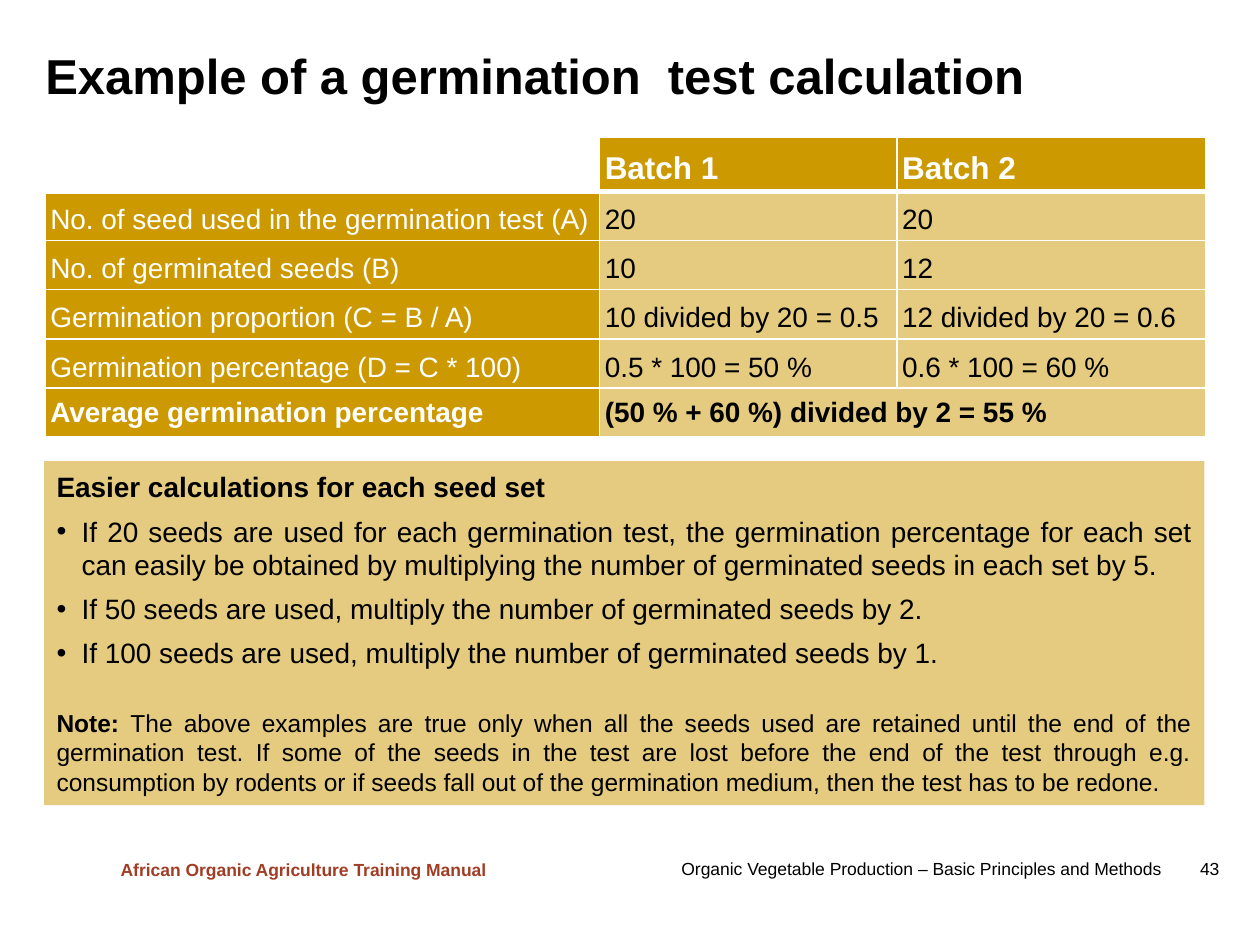
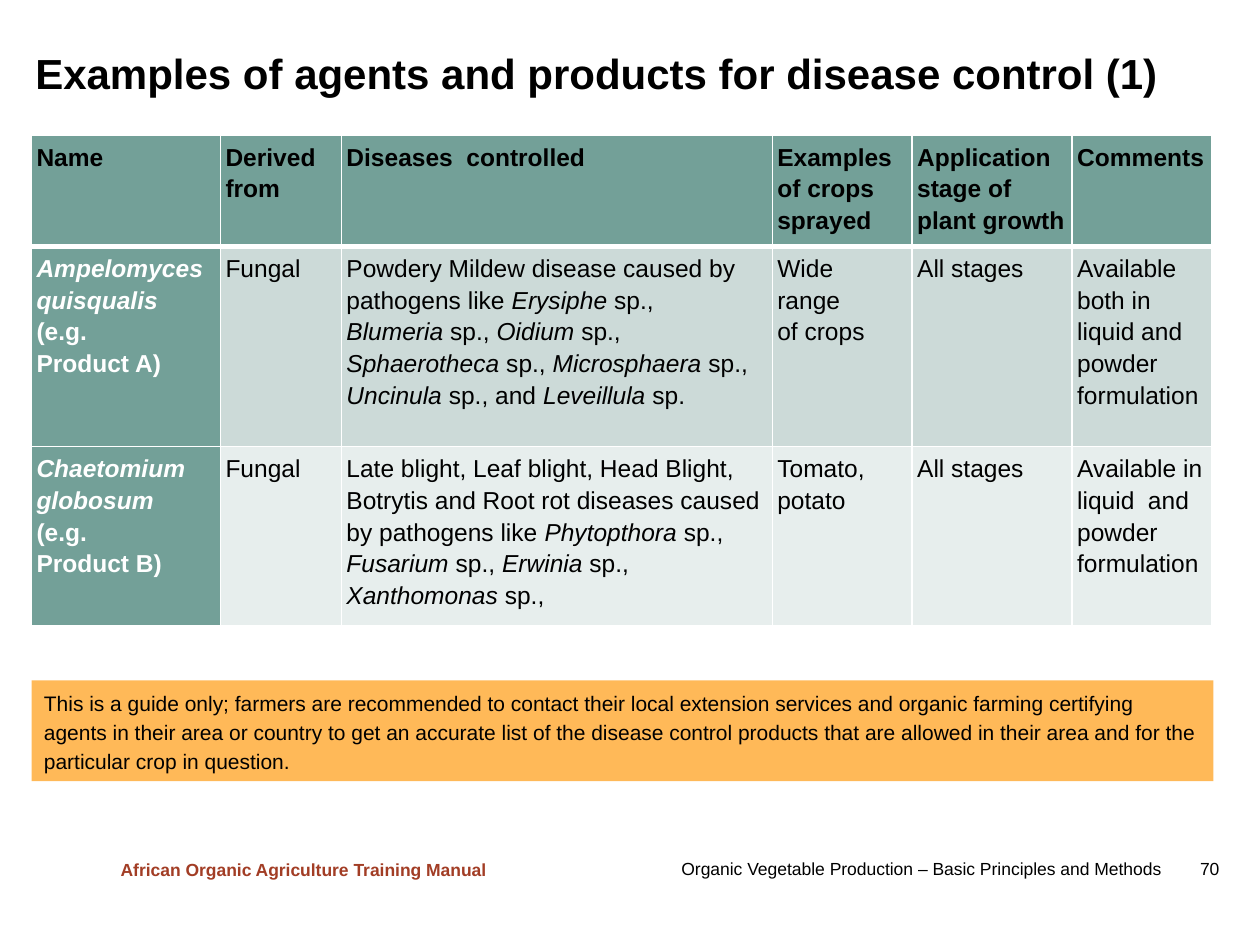
"""Build two training-manual slides on germination tests and disease control."""
import pptx
import pptx.dml.color
import pptx.enum.shapes
import pptx.enum.text
import pptx.oxml.ns
import pptx.util
from lxml import etree

RGBColor = pptx.dml.color.RGBColor
Pt = pptx.util.Pt
ALIGN = pptx.enum.text.PP_ALIGN
ANCHOR = pptx.enum.text.MSO_ANCHOR
qn = pptx.oxml.ns.qn

BLACK = RGBColor(0x00, 0x00, 0x00)
WHITE = RGBColor(0xFF, 0xFF, 0xFF)
GOLD = RGBColor(0xCC, 0x99, 0x00)
TEAL = RGBColor(0x73, 0xA0, 0x98)
TEAL_LIGHT = RGBColor(0xCC, 0xDA, 0xD8)
TEAL_PALE = RGBColor(0xE7, 0xEE, 0xED)
ORANGE = RGBColor(0xFF, 0xB9, 0x58)
RUST = RGBColor(0xA2, 0x3D, 0x25)

deck = pptx.Presentation()
deck.slide_width = pptx.util.Inches(10)
deck.slide_height = pptx.util.Inches(7.5)
UNIT = deck.slide_width // 100


def on_grid(*cells):
    return [int(cell * UNIT) for cell in cells]


def dress(part, paragraphs, font, frame={}, layout={}, fill=None, alpha=100, accent="italic"):
    if fill is not None:
        part.fill.solid()
        part.fill.fore_color.rgb = fill
        if alpha < 100:
            colour = part.fill._xPr.find(qn("a:solidFill"))[0]
            etree.SubElement(colour, qn("a:alpha"), val=str(alpha * 1000))
    holder = part if hasattr(part, "margin_left") else part.text_frame
    for key, value in frame.items():
        setattr(holder, key, value)
    for index, text in enumerate(paragraphs):
        body = part.text_frame
        paragraph = body.add_paragraph() if index else body.paragraphs[0]
        for key, value in layout.items():
            setattr(paragraph, key, value)
        for piece, words in enumerate(text.split("|")):
            for line, phrase in enumerate(words.split("\n")):
                if line:
                    paragraph.add_line_break()
                if not phrase:
                    continue
                run = paragraph.add_run()
                run.text = phrase
                run.font.name = "Arial"
                run.font.color.rgb = font["color"]
                run.font.size = Pt(font["size"])
                run.font.bold = font.get("bold", False)
                if piece % 2:
                    setattr(run.font, accent, True)


CELL_MARGINS = {f"margin_{side}": on_grid(0.4)[0] for side in ("left", "top", "right", "bottom")}
TITLE_FRAME = {
    "margin_left": 0,
    "margin_top": 0,
    "margin_right": UNIT,
    "margin_bottom": UNIT // 2,
    "vertical_anchor": ANCHOR.MIDDLE,
    "word_wrap": True,
    "auto_size": pptx.enum.text.MSO_AUTO_SIZE.NONE,
}

pages = [
    {
        "number": 43,
        "title": "Example of a germination  test calculation",
        "title_at": (3.6, 2.8, 92.1, 6.8),
        "title_size": 28,
        "table_at": (3.6, 10.9),
        "columns": (44, 23.6, 24.5),
        "heights": (4.3, 3.9, 3.9, 3.9, 3.9, 3.9),
        "head": {"color": WHITE, "size": 18, "bold": True},
        "body_size": 16,
        "bold_label_rows": (5,),
        "bold_rows": (5,),
        "middle_rows": (5,),
        "anchor": ANCHOR.BOTTOM,
        "main": GOLD,
        "bands": [(GOLD, 50)],
        "spacing": 1.0,
        "rows": [
            ("", "Batch 1", "Batch 2"),
            ("No. of seed used in the germination test (A)", "20", "20"),
            ("No. of germinated seeds (B)", "10", "12"),
            ("Germination proportion (C = B / A)", "10 divided by 20 = 0.5", "12 divided by 20 = 0.6"),
            ("Germination percentage (D = C * 100)", "0.5 * 100 = 50 %", "0.6 * 100 = 60 %"),
            ("Average germination percentage", "(50 % + 60 %) divided by 2 = 55 %"),
        ],
        "note_at": (3.5, 36.6, 92.1, 27.3),
        "note_fill": (GOLD, 50),
        "note_size": 16,
        "note_align": ALIGN.JUSTIFY,
        "note_anchor": ANCHOR.MIDDLE,
        "note": [
            "|Easier calculations for each seed set|",
            "If 20 seeds are used for each germination test, the germination percentage for each set "
            "can easily be obtained by multiplying the number of germinated seeds in each set by 5.",
            "If 50 seeds are used, multiply the number of germinated seeds by 2.",
            "If 100 seeds are used, multiply the number of germinated seeds by 1.",
            "|Note: |The above examples are true only when all the seeds used are retained until the end "
            "of the germination test. If some of the seeds in the test are lost before the end of the test "
            "through e.g. consumption by rodents or if seeds fall out of the germination medium, "
            "then the test has to be redone.",
        ],
    },
    {
        "number": 70,
        "title": "Examples of agents and products for disease control (1)",
        "title_at": (2.8, 2.5, 97.2, 7.1),
        "title_size": 24,
        "table_at": (2.5, 10.7),
        "columns": (15, 9.6, 34.2, 11.1, 12.7, 11.1),
        "heights": (8.3, 15.9, 13.3),
        "head": {"color": BLACK, "size": 14, "bold": True},
        "body_size": 14,
        "bold_label_rows": (1, 2),
        "bold_rows": (),
        "middle_rows": (),
        "anchor": ANCHOR.TOP,
        "main": TEAL,
        "bands": [(TEAL_LIGHT, 100), (TEAL_PALE, 100)],
        "spacing": 1.15,
        "rows": [
            ("Name", "Derived from", "Diseases  controlled", "Examples of crops sprayed",
             "Application stage of plant growth", "Comments"),
            ("|Ampelomyces quisqualis|\n\n(e.g. \nProduct A)", "Fungal",
             "Powdery Mildew disease caused by pathogens like |Erysiphe| sp., \n|Blumeria| sp., |Oidium| sp., "
             "|Sphaerotheca| sp., |Microsphaera| sp., |Uncinula| sp., and |Leveillula| sp.",
             "Wide\nrange \nof crops", "All stages", "Available both in liquid and powder formulation"),
            ("|Chaetomium globosum|\n\n(e.g. \nProduct B)", "Fungal",
             "Late blight, Leaf blight, Head Blight, Botrytis and Root rot diseases caused by pathogens like "
             "|Phytopthora| sp., |Fusarium| sp., |Erwinia| sp., |Xanthomonas| sp.,",
             "Tomato, potato", "All stages", "Available in liquid  and powder  formulation"),
        ],
        "note_at": (2.5, 54, 93.8, 8),
        "note_fill": (ORANGE, 100),
        "note_size": 12,
        "note_align": ALIGN.LEFT,
        "note_anchor": ANCHOR.TOP,
        "note": [
            "This is a guide only; farmers are recommended to contact their local extension services and "
            "organic farming certifying agents in their area or country to get an accurate list of the disease "
            "control products that are allowed in their area and for the particular crop in question.",
        ],
    },
]

notes = []
for page in pages:
    slide = deck.slides.add_slide(deck.slide_layouts[5])

    subject = slide.shapes.add_textbox(*on_grid(53.1, 67.6, 46, 2.7))
    dress(subject, [f"Organic Vegetable Production – Basic Principles and Methods\t{page['number']}"],
          {"color": BLACK, "size": 10}, {"word_wrap": True, "vertical_anchor": ANCHOR.MIDDLE})
    tabs = etree.SubElement(subject.text_frame.paragraphs[0]._p.get_or_add_pPr(), qn("a:tabLst"))
    etree.SubElement(tabs, qn("a:tab"), pos=str(on_grid(42.7)[0]), algn="r")
    manual = slide.shapes.add_textbox(*on_grid(8.6, 67.7, 31.4, 2.7))
    dress(manual, ["African Organic Agriculture Training Manual"],
          {"color": RUST, "size": 10, "bold": True}, {"word_wrap": False})

    title = slide.shapes.title
    title.left, title.top, title.width, title.height = on_grid(*page["title_at"])
    dress(title, [page["title"]], {"color": BLACK, "size": page["title_size"], "bold": True},
          TITLE_FRAME, {"alignment": ALIGN.LEFT})

    rows, columns, heights = page["rows"], page["columns"], page["heights"]
    table = slide.shapes.add_table(
        len(rows), len(columns), *on_grid(*page["table_at"], sum(columns), sum(heights))).table
    table.horz_banding = False
    for column, width in zip(table.columns, on_grid(*columns)):
        column.width = width
    for row, height in zip(table.rows, on_grid(*heights)):
        row.height = height

    for r, texts in enumerate(rows):
        for c in range(len(columns)):
            cell = table.cell(r, c)
            for edge in ("lnL", "lnR", "lnT", "lnB"):
                under_head = (r, edge) in ((0, "lnB"), (1, "lnT"))
                line = etree.SubElement(cell._tc.get_or_add_tcPr(), qn(f"a:{edge}"),
                                        w=str(Pt(3 if under_head else 1)))
                etree.SubElement(etree.SubElement(line, qn("a:solidFill")), qn("a:srgbClr"), val=str(WHITE))
            if c >= len(texts):
                continue
            if not texts[c]:
                cell.fill.background()
                continue
            label = c == 0
            font = page["head"] if r == 0 else {
                "color": WHITE if label else BLACK,
                "size": page["body_size"],
                "bold": r in (page["bold_label_rows"] if label else page["bold_rows"]),
            }
            anchor = ANCHOR.MIDDLE if r in page["middle_rows"] else page["anchor"]
            bands = page["bands"]
            fill, alpha = (page["main"], 100) if r == 0 or label else bands[(r - 1) % len(bands)]
            dress(cell, texts[c].split("\n\n"), font, {**CELL_MARGINS, "vertical_anchor": anchor},
                  {"line_spacing": page["spacing"]}, fill, alpha)
        if len(texts) < len(columns):
            table.cell(r, len(texts) - 1).merge(table.cell(r, len(columns) - 1))

    note = slide.shapes.add_shape(pptx.enum.shapes.MSO_SHAPE.RECTANGLE, *on_grid(*page["note_at"]))
    note.shadow.inherit = False
    note.line.fill.background()
    dress(note, page["note"], {"color": BLACK, "size": page["note_size"]},
          {"word_wrap": True, "vertical_anchor": page["note_anchor"]},
          {"alignment": page["note_align"], "line_spacing": page["spacing"]},
          *page["note_fill"], accent="bold")
    notes.append(note)

heading, *rules, caution = notes[0].text_frame.paragraphs
indent = on_grid(2)[0]
for rule in rules:
    rule.space_after = Pt(6)
    properties = rule._p.get_or_add_pPr()
    properties.set("marL", str(indent))
    properties.set("indent", str(-indent))
    etree.SubElement(properties, qn("a:buFont"), typeface="Arial")
    etree.SubElement(properties, qn("a:buChar"), char="•")
rules[0].space_before = Pt(6)
caution.space_before = Pt(16)
for run in caution.runs:
    run.font.size = Pt(14)

deck.save("out.pptx")
